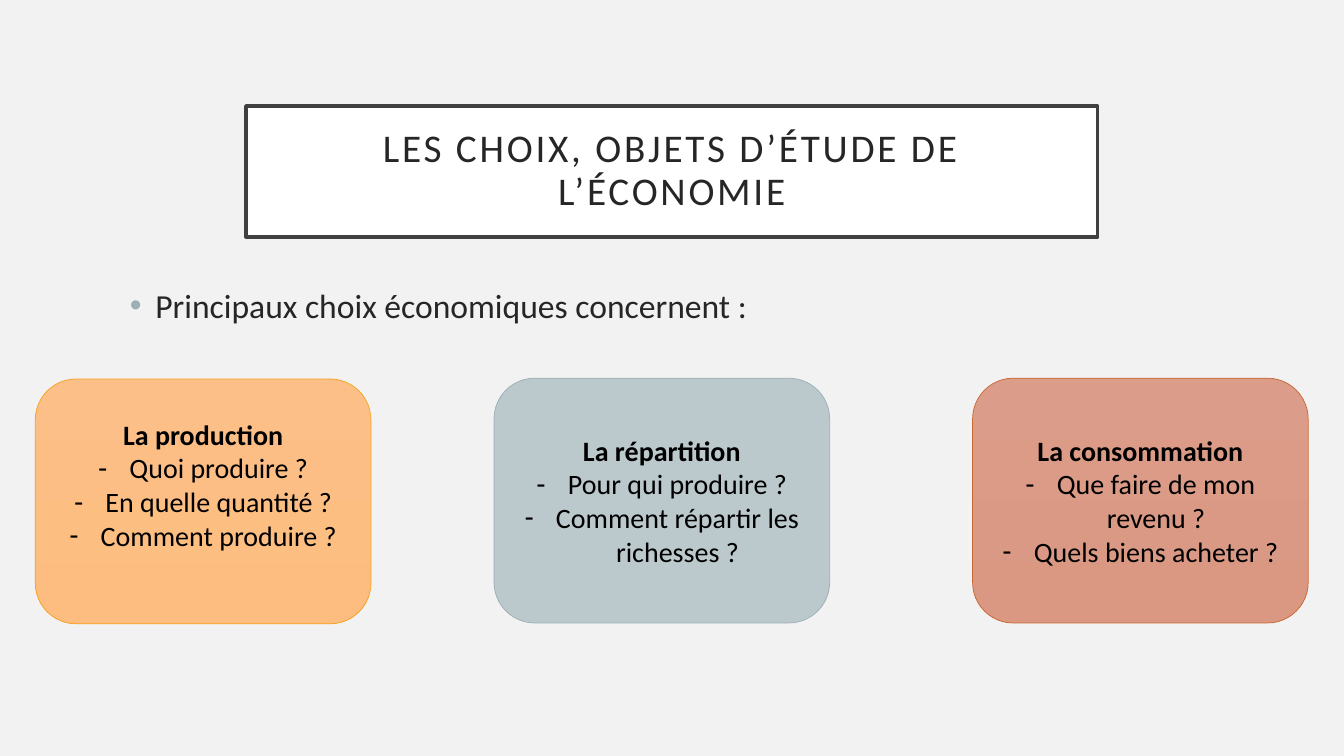
from lxml import etree
from pptx import Presentation
from pptx.dml.color import RGBColor
from pptx.enum.shapes import MSO_SHAPE
from pptx.enum.text import MSO_ANCHOR, MSO_AUTO_SIZE, PP_ALIGN
from pptx.oxml.ns import qn
from pptx.util import Cm, Pt

ROUNDED = MSO_SHAPE.ROUNDED_RECTANGLE
MIDDLE, TOP = MSO_ANCHOR.MIDDLE, MSO_ANCHOR.TOP
CENTER, LEFT = PP_ALIGN.CENTER, PP_ALIGN.LEFT
NO_AUTOFIT = MSO_AUTO_SIZE.NONE


def style(para, size, color, align, bold=False):
    para.alignment = align
    para.font.name = "Calibri"
    para.font.size = Pt(size)
    para.font.bold = bold
    para.font.color.rgb = RGBColor.from_string(color)


def add_bullet(para, char, indent, color):
    props = para._p.get_or_add_pPr()
    props.set("marL", str(Cm(indent)))
    props.set("indent", str(-Cm(indent)))
    bullet_color = etree.SubElement(props, qn("a:buClr"))
    etree.SubElement(bullet_color, qn("a:srgbClr"), val=color)
    etree.SubElement(props, qn("a:buFont"), typeface="Arial")
    etree.SubElement(props, qn("a:buChar"), char=char)


deck = Presentation()
deck.slide_width, deck.slide_height = Cm(33.87), Cm(19.05)
page = deck.slides.add_slide(deck.slide_layouts[1])
page.background.fill.solid()
page.background.fill.fore_color.rgb = RGBColor.from_string("F2F2F2")

# Framed title
title = page.shapes.title
title.left, title.top, title.width, title.height = Cm(6.2), Cm(2.67), Cm(21.46), Cm(3.3)
title.fill.solid()
title.fill.fore_color.rgb = RGBColor.from_string("FFFFFF")
title.line.color.rgb = RGBColor.from_string("404040")
title.line.width = Pt(2.5)
frame = title.text_frame
frame.text = "LES CHOIX, OBJETS D’ÉTUDE DE L’ÉCONOMIE"
frame.auto_size = NO_AUTOFIT
frame.vertical_anchor = MIDDLE
frame.margin_left = frame.margin_right = frame.margin_top = frame.margin_bottom = Cm(0.5)
para = frame.paragraphs[0]
para.line_spacing = 0.9
style(para, 28, "262626", CENTER)
para.runs[0]._r.get_or_add_rPr().set("spc", "200")

# Introductory bullet
intro = page.placeholders[1]
intro.left, intro.top, intro.width, intro.height = Cm(3.02), Cm(7.06), Cm(21.46), Cm(8.61)
frame = intro.text_frame
frame.text = "Principaux choix économiques concernent :"
frame.auto_size = NO_AUTOFIT
frame.vertical_anchor = TOP
para = frame.paragraphs[0]
add_bullet(para, "•", 0.64, "9BAFB5")
para.space_before = Pt(10)
style(para, 24, "262626", LEFT)

# Three families of choices: left, top, bottom margin, gradient, outline, heading, questions
choices = [
    (0.89, 9.55, 0.97, ("FCBF87", "FDBD80"), "F6A21D", "La production",
     ["Quoi produire ?", "En quelle quantité ?", "Comment produire ?"]),
    (12.45, 9.53, 0.13, ("BBC8CC", "B8C6CB"), "9BAFB5", "La répartition",
     ["Pour qui produire ?", "Comment répartir les richesses ?"]),
    (24.51, 9.53, 0.13, ("DB9C89", "DA9882"), "C96731", "La consommation",
     ["Que faire de mon revenu ?", "Quels biens acheter ?"]),
]
for left, top, bottom_margin, gradient, outline, heading, questions in choices:
    box = page.shapes.add_shape(ROUNDED, Cm(left), Cm(top), Cm(8.46), Cm(6.17))
    box.shadow.inherit = False
    box.fill.gradient()
    box.fill.gradient_angle = 270
    for stop, color, position in zip(box.fill.gradient_stops, gradient, (0, 1)):
        stop.color.rgb = RGBColor.from_string(color)
        stop.position = position
    box.line.color.rgb = RGBColor.from_string(outline)
    box.line.width = Pt(0.5)

    frame = box.text_frame
    frame.word_wrap = True
    frame.vertical_anchor = MIDDLE
    frame.margin_bottom = Cm(bottom_margin)
    frame.text = heading
    style(frame.paragraphs[0], 20, "000000", CENTER, bold=True)
    for question in questions:
        para = frame.add_paragraph()
        para.text = question
        add_bullet(para, "-", 0.79, "000000")
        style(para, 20, "000000", CENTER)

deck.save("out.pptx")
